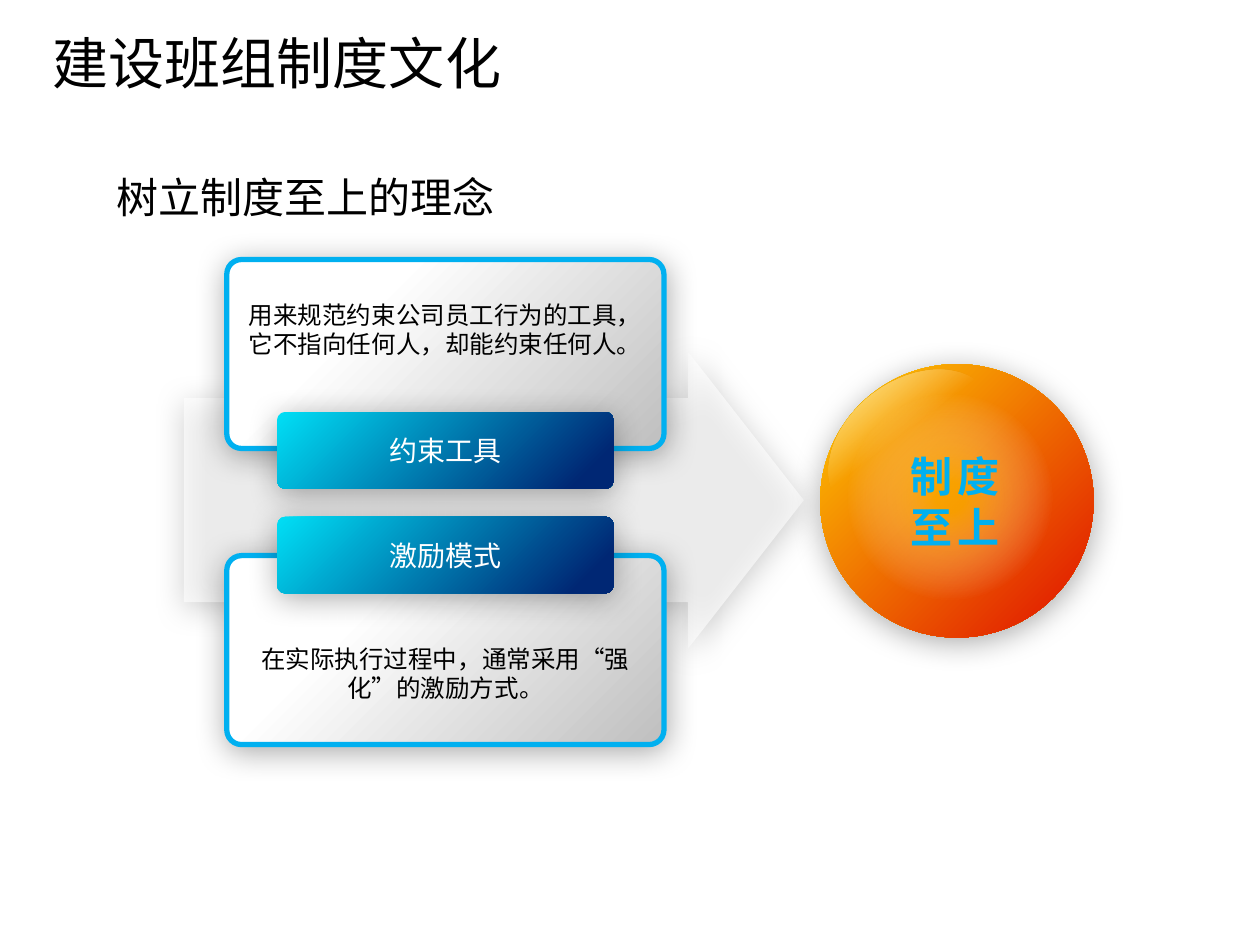
from lxml.etree import SubElement
from pptx import Presentation
from pptx.dml.color import RGBColor
from pptx.enum.shapes import MSO_SHAPE
from pptx.enum.text import MSO_ANCHOR, PP_ALIGN
from pptx.oxml import parse_xml
from pptx.oxml.ns import nsdecls, qn
from pptx.util import Inches, Pt

CJK = "Noto Sans CJK SC"
COLORS = {
    "black": "000000",
    "white": "FFFFFF",
    "grey": "BFBFBF",
    "blue": "00B0F0",
    "cyan": "00DFF6",
    "navy": "002774",
    "yellow": "FFCF01",
    "red": "E22000",
    "amber": "FFC000",
}


def rgb(name):
    return RGBColor.from_string(COLORS[name])


def color_xml(name, alpha=100):
    return (f'<a:srgbClr val="{COLORS[name]}">'
            f'<a:alpha val="{alpha * 1000}"/></a:srgbClr>')


def gradient(stops, angle=None):
    gs = "".join(f'<a:gs pos="{pos * 1000}">{color_xml(*color)}</a:gs>'
                 for pos, *color in stops)
    if angle is None:
        course = ('<a:path path="circle"><a:fillToRect l="50000" t="50000" '
                  'r="50000" b="50000"/></a:path>')
    else:
        course = f'<a:lin ang="{angle * 60000}" scaled="0"/>'
    return f'<a:gradFill {nsdecls("a")}><a:gsLst>{gs}</a:gsLst>{course}</a:gradFill>'


def solid(name, alpha):
    return f'<a:solidFill {nsdecls("a")}>{color_xml(name, alpha)}</a:solidFill>'


def add_shadow(sp):
    sp.shadow.inherit = False
    effects = sp._element.spPr.find(qn("a:effectLst"))
    effects.append(parse_xml(
        f'<a:outerShdw {nsdecls("a")} blurRad="{Pt(17.8)}" dist="{Pt(3)}" '
        f'dir="{87 * 60000}" algn="ctr" rotWithShape="0">'
        f'{color_xml("black", 33)}</a:outerShdw>'))


def add_panel(s, kind, x, y, w, h, fill, adj=(), shadow=True):
    sp = s.shapes.add_shape(kind, Inches(x), Inches(y), Inches(w), Inches(h))
    for i, value in enumerate(adj):
        sp.adjustments[i] = value
    sp._element.spPr.find(qn("a:prstGeom")).addnext(parse_xml(fill))
    sp.line.fill.background()
    sp.shadow.inherit = False
    if shadow:
        add_shadow(sp)
    return sp


def add_text(s, x, y, w, h, lines, size, color="black", font=CJK,
             align=PP_ALIGN.CENTER, anchor=MSO_ANCHOR.TOP, bold=False):
    box = s.shapes.add_textbox(Inches(x), Inches(y), Inches(w), Inches(h))
    tf = box.text_frame
    tf.word_wrap = True
    tf.vertical_anchor = anchor
    tf.text = "\n".join(lines)
    for p in tf.paragraphs:
        p.alignment = align
        if font == CJK:
            p.line_spacing = Pt(size * 1.2)
        p.font.size = Pt(size)
        p.font.bold = bold
        p.font.color.rgb = rgb(color)
        p.font.name = font
        SubElement(p._p.pPr.find(qn("a:defRPr")), qn("a:ea"), typeface=font)
    return tf


def add_headings(s, x, y):
    title = add_text(s, x, y, 10, 0.98, ["建设班组制度文化"], 32,
                     align=PP_ALIGN.LEFT, anchor=MSO_ANCHOR.MIDDLE)
    title.margin_left = Inches(0.42)
    add_text(s, x + 0.83, y + 1.31, 8.98, 0.47, ["树立制度至上的理念"], 24,
             font="Calibri", align=PP_ALIGN.LEFT)


def add_card(s, x, y, w, h, text, text_dy, text_w):
    fill = gradient([(30, "white"), (100, "grey")], 45)
    sp = add_panel(s, MSO_SHAPE.ROUNDED_RECTANGLE, x, y, w, h, fill, [0.078])
    sp.line.color.rgb = rgb("blue")
    sp.line.width = Pt(3)
    add_text(s, x + (w - text_w) / 2, y + text_dy, text_w, 0.57, [text], 14)


def add_label(s, x, y, w, h, text):
    fill = gradient([(0, "cyan"), (90, "navy")], 45)
    add_panel(s, MSO_SHAPE.ROUNDED_RECTANGLE, x, y, w, h, fill, [0.106])
    add_text(s, x, y + 0.12, w, h - 0.24, [text], 16, "white",
             anchor=MSO_ANCHOR.MIDDLE)


def add_ball(s, x, y, d, lines):
    add_panel(s, MSO_SHAPE.OVAL, x, y, d, d,
              gradient([(0, "yellow"), (90, "red")], 45))
    shine = add_panel(s, MSO_SHAPE.OVAL, x, y + 0.13, 1.47, 1.05,
                      gradient([(0, "white"), (45, "white", 0)], 90), shadow=False)
    shine.rotation = 323.1
    add_panel(s, MSO_SHAPE.OVAL, x + 0.21, y + 0.23, 1.64, 1.65,
              gradient([(10, "amber", 60), (70, "white", 0)]), shadow=False)
    tf = add_text(s, x + 0.23, y + 0.64, 1.68, 0.91, lines, 24, "blue", bold=True)
    for p in tf.paragraphs:
        p._p.pPr.find(qn("a:defRPr")).set("spc", "300")


def add_diagram(s, x, y):
    add_panel(s, MSO_SHAPE.RIGHT_ARROW, x, y + 0.73, 4.92, 2.36,
              solid("white", 60), [0.686, 0.39])
    add_card(s, x + 0.34, y + 2.35, 3.47, 1.5,
             "在实际执行过程中，通常采用“强化”的激励方式。", 0.65, 3.22)
    add_card(s, x + 0.34, y, 3.47, 1.5,
             "用来规范约束公司员工行为的工具，它不指向任何人，却能约束任何人。", 0.27, 3.4)
    for i, text in enumerate(["约束工具", "激励模式"]):
        add_label(s, x + 0.74, y + 1.21 + 0.83 * i, 2.67, 0.61, text)
    add_ball(s, x + 5.05, y + 0.83, 2.17, ["制度", "至上"])


def main():
    prs = Presentation()
    prs.slide_width, prs.slide_height = Inches(10), Inches(7.5)
    s = prs.slides.add_slide(prs.slide_layouts[6])
    add_headings(s, 0, 0)
    add_diagram(s, 1.46, 2.06)
    prs.save("out.pptx")


if __name__ == "__main__":
    main()
